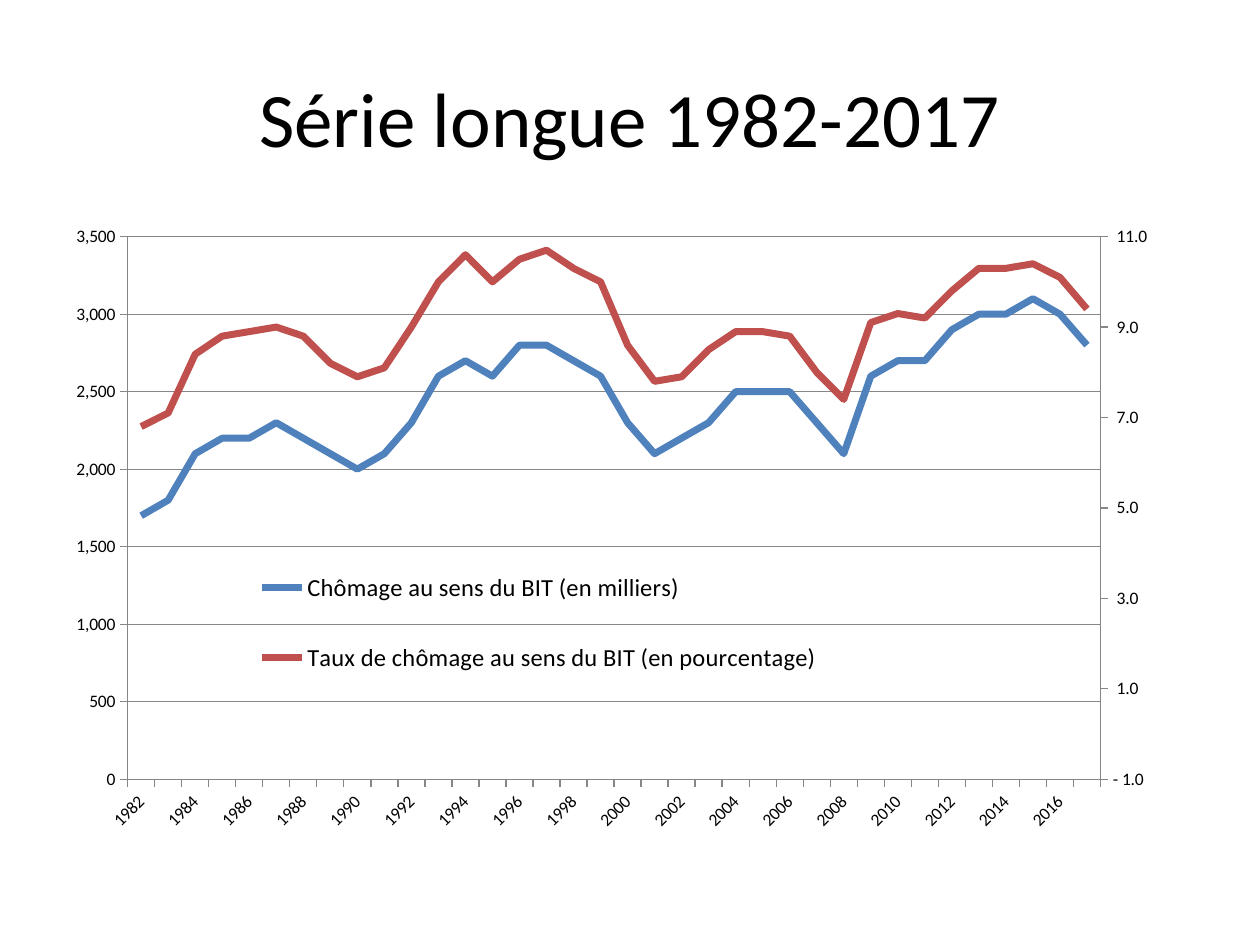
from copy import deepcopy

from lxml.etree import SubElement
from pptx import Presentation
from pptx.chart.axis import ValueAxis
from pptx.chart.data import CategoryChartData
from pptx.dml.color import RGBColor
from pptx.enum.chart import XL_CHART_TYPE, XL_LEGEND_POSITION, XL_TICK_MARK
from pptx.enum.text import MSO_ANCHOR, PP_ALIGN
from pptx.oxml.ns import qn
from pptx.util import Inches, Pt

BLACK = RGBColor(0x00, 0x00, 0x00)
BLUE = RGBColor(0x4F, 0x81, 0xBD)
RED = RGBColor(0xC0, 0x50, 0x4D)
GRAY = RGBColor(0x86, 0x86, 0x86)

YEARS = [str(year) for year in range(1982, 2018)]
UNEMPLOYED = [
    1700, 1800, 2100, 2200, 2200, 2300, 2200, 2100, 2000, 2100, 2300, 2600,
    2700, 2600, 2800, 2800, 2700, 2600, 2300, 2100, 2200, 2300, 2500, 2500,
    2500, 2300, 2100, 2600, 2700, 2700, 2900, 3000, 3000, 3100, 3000, 2800,
]
RATES = [
    6.8, 7.1, 8.4, 8.8, 8.9, 9, 8.8, 8.2, 7.9, 8.1, 9, 10,
    10.6, 10, 10.5, 10.7, 10.3, 10, 8.6, 7.8, 7.9, 8.5, 8.9, 8.9,
    8.8, 8, 7.4, 9.1, 9.3, 9.2, 9.8, 10.3, 10.3, 10.4, 10.1, 9.4,
]


def set_layout(parent, predecessor, box, inner=False):
    for old in parent.findall(qn("c:layout")):
        parent.remove(old)
    layout = parent.makeelement(qn("c:layout"))
    if predecessor is None:
        parent.insert(0, layout)
    else:
        predecessor.addnext(layout)
    manual = SubElement(layout, qn("c:manualLayout"))
    if inner:
        SubElement(manual, qn("c:layoutTarget"), val="inner")
    for mode in ("xMode", "yMode"):
        SubElement(manual, qn(f"c:{mode}"), val="edge")
    for key, value in zip("xywh", box):
        SubElement(manual, qn(f"c:{key}"), val=str(value))


class SlideBuilder:
    font = "Calibri"

    def __init__(self, slide):
        self.slide = slide

    def style(self, font, size):
        font.name = self.font
        font.size = Pt(size)
        font.color.rgb = BLACK

    def title(self, text, left, top, width, height):
        title = self.slide.shapes.add_textbox(left, top, width, height)
        frame = title.text_frame
        frame.word_wrap = True
        frame.vertical_anchor = MSO_ANCHOR.MIDDLE
        paragraph = frame.paragraphs[0]
        paragraph.alignment = PP_ALIGN.CENTER
        run = paragraph.add_run()
        run.text = text
        self.style(run.font, 44)

    def axis(self, axis):
        axis.major_tick_mark = XL_TICK_MARK.OUTSIDE
        axis.minor_tick_mark = XL_TICK_MARK.NONE
        axis.format.line.color.rgb = GRAY
        axis.format.line.width = Pt(0.75)
        self.style(axis.tick_labels.font, 10)

    def scale(self, axis, low, high, step, number_format):
        axis.minimum_scale, axis.maximum_scale = low, high
        axis.major_unit = step
        axis.tick_labels.number_format = number_format
        axis.tick_labels.number_format_is_linked = False

    def line_chart(self, years, series, left, top, width, height):
        data = CategoryChartData()
        data.categories = years
        for name, values, _ in series:
            data.add_series(name, values)
        chart = self.slide.shapes.add_chart(
            XL_CHART_TYPE.LINE, left, top, width, height, data).chart
        self.style(chart.font, 10)
        chart.has_title = False
        chart.plots[0].vary_by_categories = False
        for line, (_, _, color) in zip(chart.plots[0].series, series):
            line.smooth = False
            line.format.line.color.rgb = color
            line.format.line.width = Pt(4)

        years_axis, left_axis = chart.category_axis, chart.value_axis
        self.axis(years_axis)
        self.axis(left_axis)
        self.scale(left_axis, 0, 3500, 500, "#,##0")
        left_axis.has_major_gridlines = True
        left_axis.major_gridlines.format.line.color.rgb = GRAY
        left_axis.major_gridlines.format.line.width = Pt(0.75)
        self.right_axis(chart)

        labels = years_axis._element.find(qn("c:txPr")).find(qn("a:bodyPr"))
        labels.set("rot", "-2700000")
        labels.set("vert", "horz")
        skip = years_axis._element.makeelement(qn("c:tickLblSkip"), val="2")
        years_axis._element.find(qn("c:noMultiLvlLbl")).addprevious(skip)
        plot_area = chart._chartSpace.chart.plotArea
        set_layout(plot_area, None, (0.057, 0.026, 0.858, 0.87), True)
        self.legend(chart)

    def right_axis(self, chart):
        plot_area = chart._chartSpace.chart.plotArea
        left_plot = plot_area.find(qn("c:lineChart"))
        right_plot = deepcopy(left_plot)
        left_plot.addnext(right_plot)
        left_plot.remove(left_plot.findall(qn("c:ser"))[1])
        right_plot.remove(right_plot.find(qn("c:ser")))
        years = deepcopy(plot_area.find(qn("c:catAx")))
        values = deepcopy(plot_area.find(qn("c:valAx")))
        plot_area.find(qn("c:valAx")).addnext(values)
        values.addnext(years)

        year_id, value_id = "50010", "50020"
        for ref, number in zip(right_plot.findall(qn("c:axId")), (year_id, value_id)):
            ref.set("val", number)
        for element, own, crossed in ((years, year_id, value_id),
                                      (values, value_id, year_id)):
            element.find(qn("c:axId")).set("val", own)
            element.find(qn("c:crossAx")).set("val", crossed)
        values.find(qn("c:axPos")).set("val", "r")
        values.find(qn("c:crosses")).set("val", "max")
        axis = ValueAxis(values)
        axis.has_major_gridlines = False
        self.scale(axis, -1, 11, 2, '" "#,##0.0;"- "#,##0.0')
        ValueAxis(years).visible = False

    def legend(self, chart):
        chart.has_legend = True
        legend = chart.legend
        legend.position = XL_LEGEND_POSITION.RIGHT
        legend.include_in_layout = True
        self.style(legend.font, 14)
        position = legend._element.find(qn("c:legendPos"))
        set_layout(legend._element, position, (0.16, 0.5, 0.52, 0.29))


def main():
    presentation = Presentation()
    presentation.slide_width = Inches(10)
    presentation.slide_height = Inches(7.5)
    builder = SlideBuilder(presentation.slides.add_slide(presentation.slide_layouts[6]))
    builder.title("Série longue 1982-2017",
                  Inches(0.5), Inches(0.3), Inches(9), Inches(1.25))
    series = [
        ("Chômage au sens du BIT (en milliers)", UNEMPLOYED, BLUE),
        ("Taux de chômage au sens du BIT (en pourcentage)", RATES, RED),
    ]
    builder.line_chart(YEARS, series,
                       Inches(0.5), Inches(1.75), Inches(9), Inches(4.95))
    presentation.save("out.pptx")


if __name__ == "__main__":
    main()
